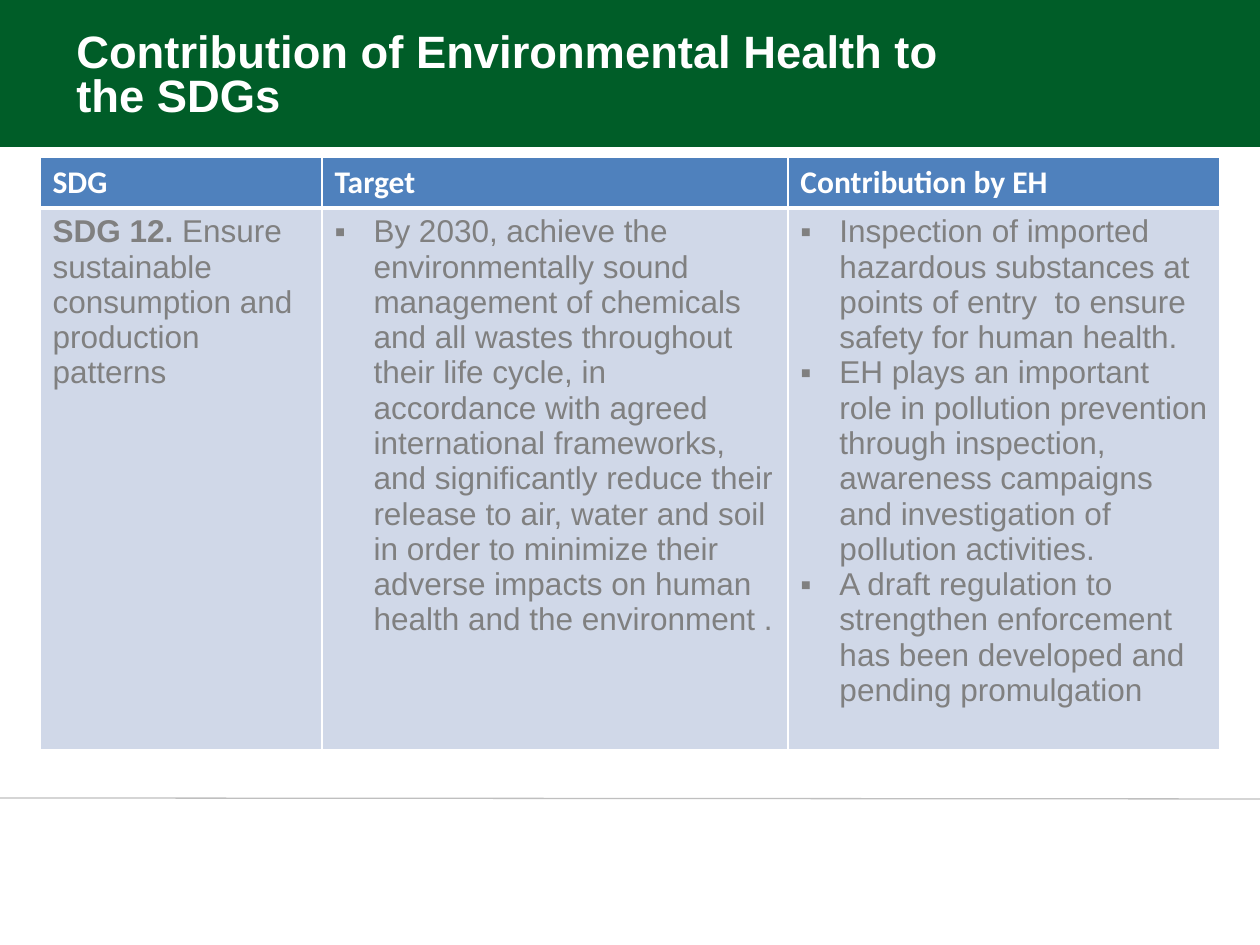
from lxml.etree import SubElement
from pptx import Presentation
from pptx.dml.color import RGBColor
from pptx.enum.shapes import MSO_CONNECTOR, MSO_SHAPE
from pptx.enum.text import MSO_ANCHOR
from pptx.oxml.ns import qn
from pptx.util import Emu, Pt

PX = 914400 / 126
GREEN = RGBColor(0x00, 0x5D, 0x28)
WHITE = RGBColor(0xFF, 0xFF, 0xFF)
BLUE = RGBColor(0x4F, 0x81, 0xBD)
PALE_BLUE = RGBColor(0xD0, 0xD8, 0xE8)
GREY = RGBColor(0x80, 0x80, 0x80)
LIGHT_GREY = RGBColor(0xBF, 0xBF, 0xBF)

TITLE_FORMAT = {"name": "Arial", "size": Pt(25.9), "bold": True}
HEADER_FORMAT = {"name": "Calibri", "size": Pt(18), "bold": True}
BODY_FORMAT = {"name": "Arial", "size": Pt(18), "bold": False}
BOLD_FORMAT = {**BODY_FORMAT, "bold": True}

HEADERS = ["SDG", "Target", "Contribution by EH"]
GOAL = [
    ("SDG 12. ", BOLD_FORMAT),
    ("Ensure sustainable consumption and production patterns", BODY_FORMAT),
]
TARGETS = [
    "By 2030, achieve the environmentally sound management of chemicals and all "
    "wastes throughout their life cycle, in accordance with agreed international "
    "frameworks, and significantly reduce their release to air, water and soil in "
    "order to minimize their adverse impacts on human health and the environment .",
]
CONTRIBUTIONS = [
    "Inspection of imported hazardous substances at points of entry  to ensure "
    "safety for human health.",
    "EH plays an important role in pollution prevention through inspection, "
    "awareness campaigns and investigation of pollution activities.",
    "A draft regulation to strengthen enforcement has been developed and pending "
    "promulgation",
]


def px(*lengths):
    return [Emu(round(length * PX)) for length in lengths]


def add_run(paragraph, text, formats, color):
    run = paragraph.add_run()
    run.text = text
    for name, value in formats.items():
        setattr(run.font, name, value)
    run.font.color.rgb = color


def set_bullet(paragraph):
    properties = paragraph._p.get_or_add_pPr()
    indent = px(39)[0]
    properties.set("marL", str(indent))
    properties.set("indent", str(-indent))
    SubElement(properties, qn("a:buFont"), typeface="Arial")
    SubElement(properties, qn("a:buChar"), char="▪")


def style_cell(cell, color, top, bottom):
    properties = cell._tc.get_or_add_tcPr()
    for side, width in {"L": 1, "R": 1, "T": top, "B": bottom}.items():
        line = SubElement(properties, qn(f"a:ln{side}"), w=str(Pt(width)))
        fill = SubElement(line, qn("a:solidFill"))
        SubElement(fill, qn("a:srgbClr"), val=str(WHITE))
    cell.fill.solid()
    cell.fill.fore_color.rgb = color


def add_title_band(slide, left, top, width, height):
    band = slide.shapes.add_shape(MSO_SHAPE.RECTANGLE, *px(left, top, width, height))
    band.shadow.inherit = False
    band.fill.solid()
    band.fill.fore_color.rgb = GREEN
    band.line.fill.background()
    title = slide.shapes.add_textbox(*px(left + 64, top + 16, 922, 111))
    frame = title.text_frame
    frame.word_wrap = True
    frame.vertical_anchor = MSO_ANCHOR.BOTTOM
    paragraph = frame.paragraphs[0]
    paragraph.line_spacing = 0.8
    add_run(paragraph, "Contribution of Environmental Health to the SDGs", TITLE_FORMAT, WHITE)


def add_footer_rule(slide, left, top, width, height):
    rule = slide.shapes.add_connector(
        MSO_CONNECTOR.STRAIGHT, *px(left, top, left + width, top + height)
    )
    rule.line.color.rgb = LIGHT_GREY
    rule.line.width = Pt(0.75)
    SubElement(rule._element.spPr, qn("a:effectLst"))


def add_goal_table(slide, left, top, width, height):
    table = slide.shapes.add_table(2, 3, *px(left, top, width, height)).table
    header_height = 51
    for row, length in zip(table.rows, px(header_height, height - header_height)):
        row.height = length
    for column, length in zip(table.columns, px(282, 466, width - 748)):
        column.width = length

    for index, header in enumerate(HEADERS):
        cell = table.cell(0, index)
        style_cell(cell, BLUE, 1, 3)
        add_run(cell.text_frame.paragraphs[0], header, HEADER_FORMAT, WHITE)
        style_cell(table.cell(1, index), PALE_BLUE, 3, 1)

    goal = table.cell(1, 0).text_frame.paragraphs[0]
    for text, formats in GOAL:
        add_run(goal, text, formats, GREY)
    for index, items in enumerate([TARGETS, CONTRIBUTIONS], start=1):
        frame = table.cell(1, index).text_frame
        for number, text in enumerate(items):
            paragraph = frame.add_paragraph() if number else frame.paragraphs[0]
            set_bullet(paragraph)
            add_run(paragraph, text, BODY_FORMAT, GREY)


def main():
    presentation = Presentation()
    presentation.slide_width, presentation.slide_height = px(1260, 945)
    slide = presentation.slides.add_slide(presentation.slide_layouts[6])
    add_title_band(slide, 0, 0, 1260, 147)
    add_footer_rule(slide, 0, 798, 1260, 1)
    add_goal_table(slide, 40, 157, 1180, 591)
    presentation.save("out.pptx")


if __name__ == "__main__":
    main()
